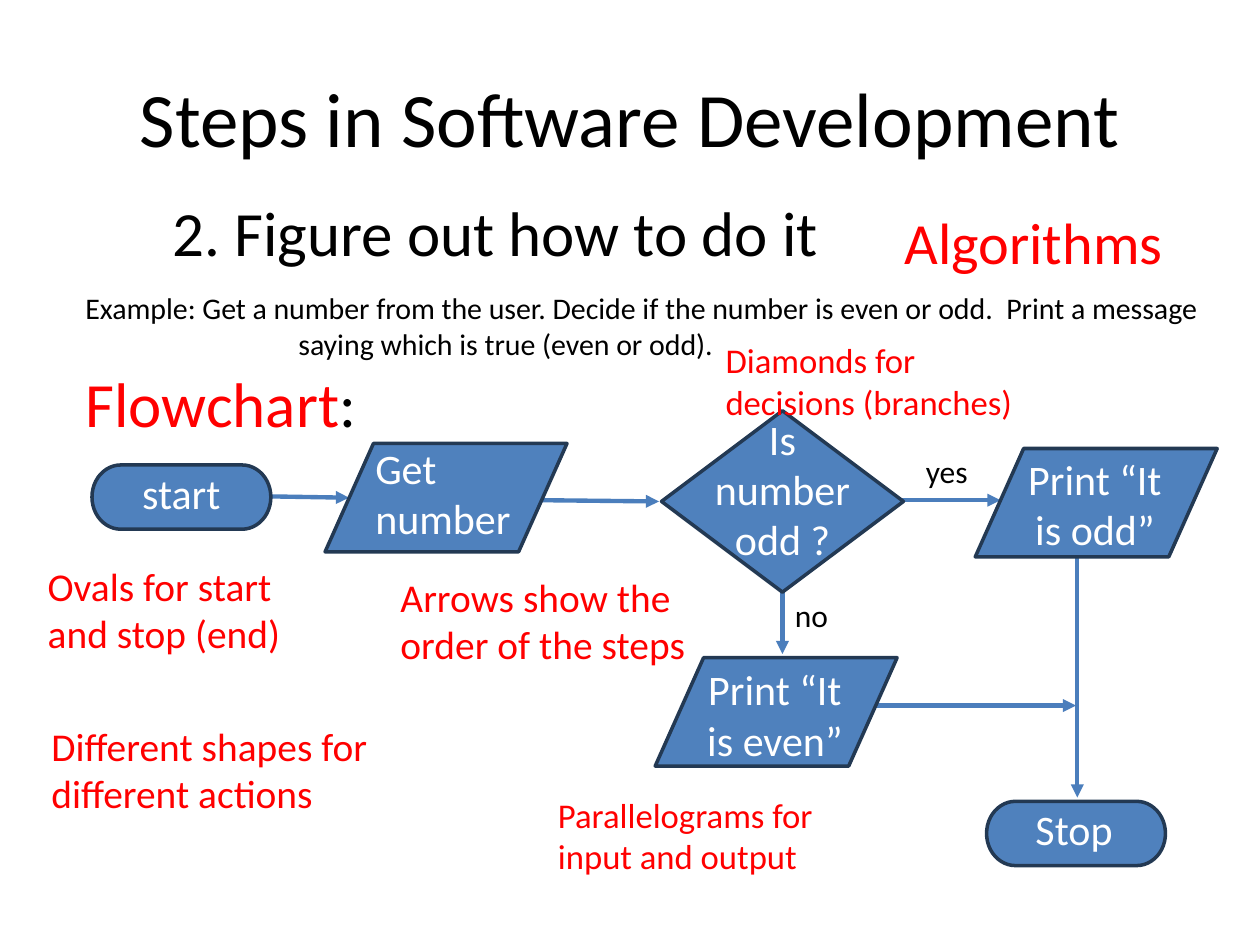
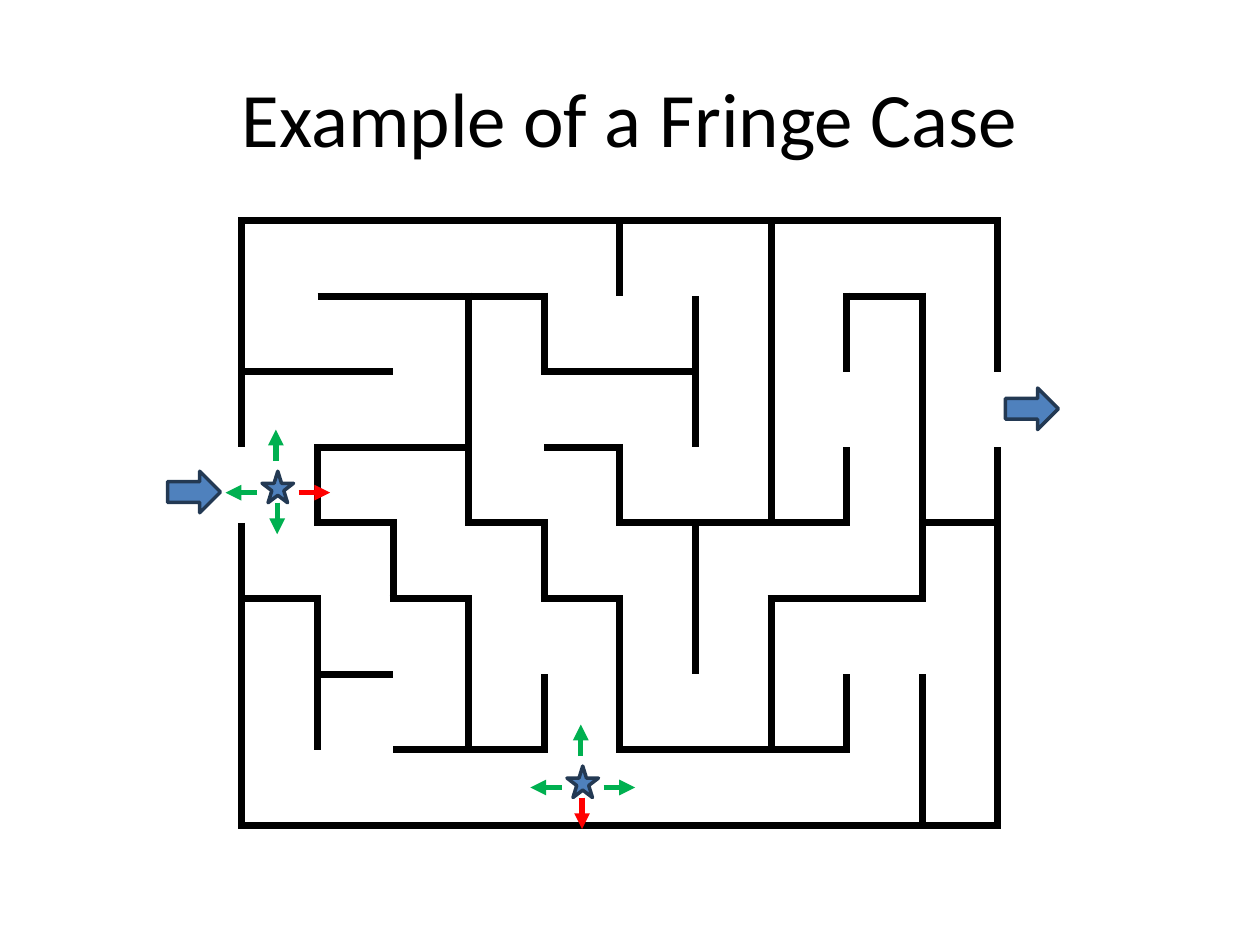
"""Build two slides on software steps: an odd-or-even flowchart and a maze fringe case."""
from lxml.etree import SubElement
from pptx import Presentation
from pptx.dml.color import RGBColor
from pptx.enum.shapes import MSO_CONNECTOR as LINK, MSO_SHAPE as SHAPE
from pptx.enum.text import MSO_ANCHOR as ANCHOR, PP_ALIGN as ALIGN
from pptx.oxml.ns import qn
from pptx.util import Inches, Pt

COLOURS = {"ink": "000000", "note": "FF0000", "fill": "4F81BD", "edge": "233953",
           "flow": "4B7EBC", "open": "00B050", "blocked": "FF0000", "label": "FFFFFF"}
RGB = {role: RGBColor.from_string(value) for role, value in COLOURS.items()}


def add_text(shapes, box, runs, size, align=ALIGN.LEFT, anchor=ANCHOR.TOP, hanging=0):
    frame = shapes.add_textbox(*map(Inches, box)).text_frame
    for key, value in {"word_wrap": True, "vertical_anchor": anchor}.items():
        setattr(frame, key, value)
    paragraph = frame.paragraphs[0]
    paragraph.alignment = align
    if hanging:
        indents = paragraph._p.get_or_add_pPr()
        indents.set("marL", str(Inches(hanging)))
        indents.set("indent", str(Inches(-hanging)))
    for words, role in runs:
        run = paragraph.add_run()
        run.text = words
        for key, value in {"name": "Calibri", "size": Pt(size)}.items():
            setattr(run.font, key, value)
        run.font.color.rgb = RGB[role]


def add_block(shapes, kind, box):
    block = shapes.add_shape(kind, *map(Inches, box))
    block.shadow.inherit = False
    block.fill.solid()
    block.fill.fore_color.rgb = RGB["fill"]
    block.line.color.rgb = RGB["edge"]
    block.line.width = Pt(2)


deck = Presentation()
deck.slide_width, deck.slide_height = Inches(10), Inches(7.5)
blank = deck.slide_layouts[6]
flowchart, maze = deck.slides.add_slide(blank).shapes, deck.slides.add_slide(blank).shapes

for slide, title in ((flowchart, "Steps in Software Development"),
                     (maze, "Example of a Fringe Case")):
    add_text(slide, (0.5, 0.3, 9, 1.25), [(title, "ink")], 44, ALIGN.CENTER, ANCHOR.MIDDLE)

example = ("Example: Get a number from the user. Decide if the number is even or odd.  "
           "Print a message saying which is true (even or odd).")
for box, runs, size, hanging in (
    ((1.27, 1.49, 6.39, 0.7), [("2. Figure out how to do it", "ink")], 36, 0),
    ((7.08, 1.59, 2.26, 0.57), [("Algorithms", "note")], 33.3, 0),
    ((0.58, 2.25, 9.33, 0.57), [(example, "ink")], 17.1, 1.69),
    ((0.58, 2.84, 3.58, 0.77), [("Flowchart", "note"), (":", "ink")], 36, 1.69),
    ((7.25, 3.54, 0.58, 0.4), [("yes", "ink")], 18, 0),
    ((6.21, 4.68, 0.58, 0.4), [("no", "ink")], 18, 0),
    ((3.08, 4.5, 2.92, 0.77), [("Arrows show the order of the steps", "note")], 22.5, 0),
    ((0.31, 5.68, 2.92, 0.77), [("Different shapes for different actions", "note")], 22.5, 0),
    ((0.28, 4.41, 2.18, 0.77), [("Ovals for start and stop (end)", "note")], 22.5, 0),
    ((4.33, 6.25, 2.34, 0.67), [("Parallelograms for input and output", "note")], 19.8, 0),
):
    add_text(flowchart, box, runs, size, hanging=hanging)

ROWS, COLUMNS, CELL = 8, 10, 0.6
level_walls = ["0123456789", "1238", "0145", "124", "135679", "02478", "1", "23567", "0123456789"]
upright_walls = ["057A", "0346789A", "03679", "135789A", "02469A", "013567A", "01345789A", "09A"]
levels = [{int(place, 16) for place in walls} for walls in level_walls]
uprights = [{int(place, 16) for place in walls} for walls in upright_walls]

grid = maze.add_table(ROWS, COLUMNS, Inches(1.92), Inches(1.75),
                      Inches(COLUMNS * CELL), Inches(ROWS * CELL)).table
for key in ("first_row", "horz_banding"):
    setattr(grid, key, False)
for row in range(ROWS):
    for column in range(COLUMNS):
        cell = grid.cell(row, column)
        borders = cell._tc.get_or_add_tcPr()
        for side, walled in {"a:lnL": column in uprights[row],
                             "a:lnR": column + 1 in uprights[row],
                             "a:lnT": column in levels[row],
                             "a:lnB": column in levels[row + 1]}.items():
            wall = SubElement(borders, qn(side), w=str(Pt(4.5)))
            if walled:
                paint = SubElement(wall, qn("a:solidFill"))
                SubElement(paint, qn("a:srgbClr"), val=COLOURS["ink"])
            else:
                SubElement(wall, qn("a:noFill"))
        cell.fill.background()

arrows = [(flowchart, "flow", 2.5, ends) for ends in (
    (2.15, 3.94, 2.77, 3.95), (4.29, 3.97, 5.23, 3.98), (7.14, 3.97, 7.94, 3.97),
    (6.21, 4.69, 6.21, 5.19), (8.55, 4.33, 8.55, 6.33), (6.92, 5.6, 8.54, 5.6))]
STEP = 0.25
moves = {"right": (0.29, 0.17, STEP, 0), "up": (0.11, -0.08, 0, -STEP),
         "left": (-0.04, 0.17, -STEP, 0), "down": (0.12, 0.25, 0, STEP)}
explorers = [(4.5, 6.08, "down"), (2.08, 3.74, "right")]
for left, top, dead_end in explorers:
    for move, (dx, dy, run_x, run_y) in moves.items():
        x, y = left + dx, top + dy
        arrows.append((maze, "blocked" if move == dead_end else "open", 3,
                       (x, y, x + run_x, y + run_y)))

for slide, role, width, ends in arrows:
    arrow = slide.add_connector(LINK.STRAIGHT, *map(Inches, ends))
    arrow.line.color.rgb = RGB[role]
    arrow.line.width = Pt(width)
    SubElement(arrow.line._get_or_add_ln(), qn("a:tailEnd"), type="triangle")
    SubElement(arrow._element.spPr, qn("a:effectLst"))

sizes = {SHAPE.FLOWCHART_TERMINATOR: (1.42, 0.51), SHAPE.FLOWCHART_DATA: (1.92, 0.86),
         SHAPE.FLOWCHART_DECISION: (1.92, 1.44)}
for kind, corner, words, label_box, align in (
    (SHAPE.FLOWCHART_TERMINATOR, (0.73, 3.69), "start", (1.03, 3.66, 0.83, 0.5), ALIGN.LEFT),
    (SHAPE.FLOWCHART_DATA, (2.58, 3.52), "Get number", (2.88, 3.46, 1.42, 0.91), ALIGN.LEFT),
    (SHAPE.FLOWCHART_DECISION, (5.25, 3.26), "Is number odd ?", (5.5, 3.23, 1.42, 1.31),
     ALIGN.CENTER),
    (SHAPE.FLOWCHART_TERMINATOR, (7.83, 6.36), "Stop", (8.12, 6.33, 0.83, 0.5), ALIGN.LEFT),
    (SHAPE.FLOWCHART_DATA, (5.2, 5.22), "Print “It is even”", (5.44, 5.22, 1.42, 0.91),
     ALIGN.CENTER),
    (SHAPE.FLOWCHART_DATA, (7.74, 3.56), "Print “It is odd”", (7.98, 3.55, 1.42, 0.91),
     ALIGN.CENTER),
):
    node = flowchart.add_group_shape().shapes
    add_block(node, kind, corner + sizes[kind])
    add_text(node, label_box, [(words, "label")], 24, align)
add_text(flowchart, (5.66, 2.64, 2.59, 0.65),
         [("Diamonds for decisions (branches)", "note")], 19.8)

for entrance in ((1.33, 3.74), (7.98, 3.08)):
    add_block(maze, SHAPE.RIGHT_ARROW, entrance + (0.42, 0.33))
for left, top, _ in explorers:
    add_block(maze, SHAPE.STAR_5_POINT, (left, top, 0.25, 0.25))

deck.save("out.pptx")
